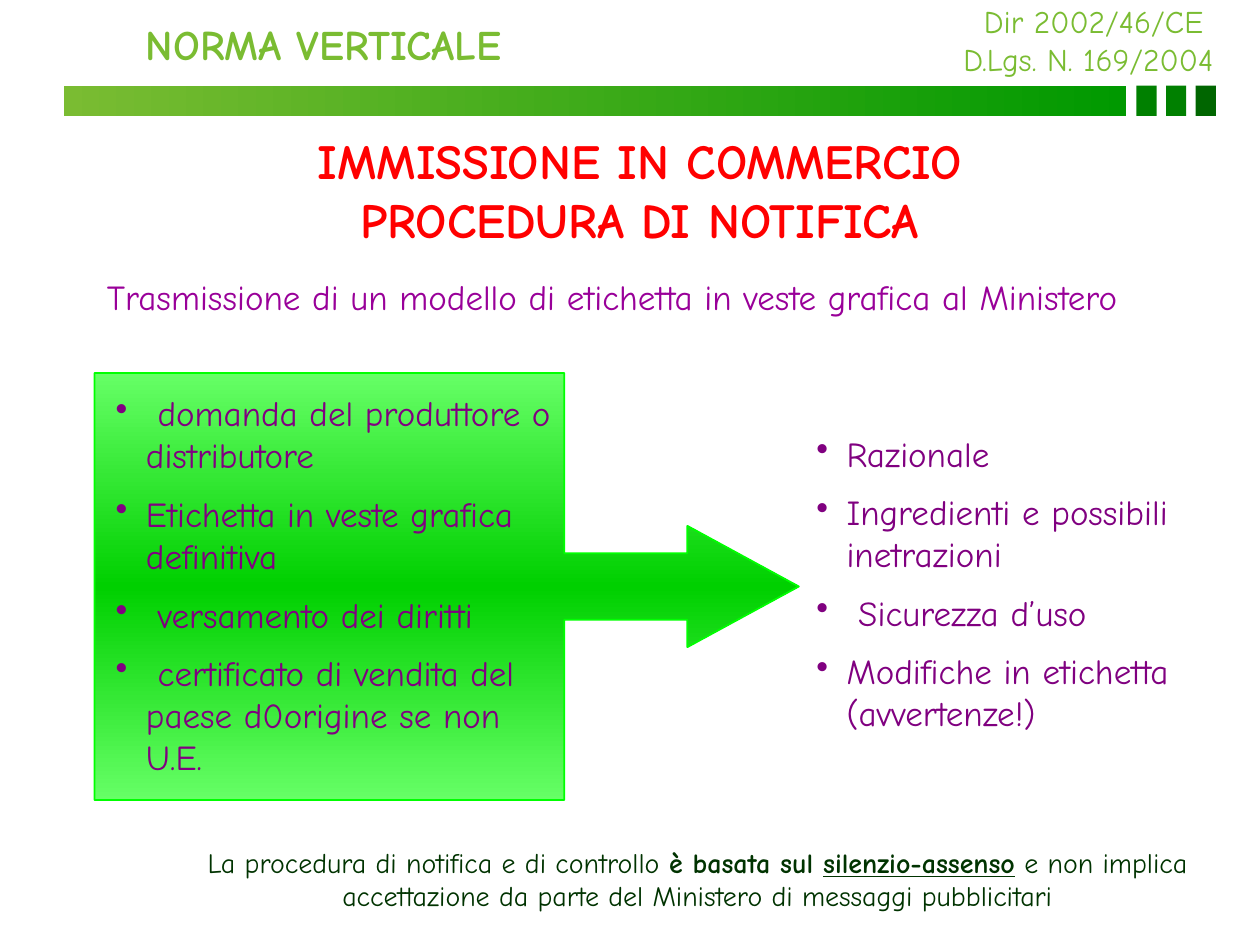
from lxml.etree import SubElement
from pptx import Presentation
from pptx.dml.color import RGBColor
from pptx.enum.shapes import MSO_SHAPE as SHAPE
from pptx.enum.text import PP_ALIGN as ALIGN
from pptx.oxml.ns import qn
from pptx.util import Inches, Pt

FONT = "Comic Neue"
LIME = RGBColor(0x7A, 0xBC, 0x32)
GREEN = RGBColor(0x00, 0x99, 0x00)
MID_GREEN = RGBColor(0x00, 0x80, 0x00)
DARK_GREEN = RGBColor(0x00, 0x66, 0x00)
NOTE_GREEN = RGBColor(0x00, 0x33, 0x00)
LIGHT_GREEN = RGBColor(0x66, 0xFF, 0x66)
DEEP_GREEN = RGBColor(0x00, 0xD0, 0x00)
EDGE_GREEN = RGBColor(0x00, 0xFF, 0x00)
RED = RGBColor(0xFF, 0x00, 0x00)
VIOLET = RGBColor(0x99, 0x00, 0x99)
PURPLE = RGBColor(0x80, 0x00, 0x80)


def add_bullet(p, indent=0.24):
    pPr = p._p.get_or_add_pPr()
    pPr.set("marL", str(Inches(indent)))
    pPr.set("indent", str(-Inches(indent)))
    SubElement(pPr, qn("a:buChar"), char="•")


def add_text(slide, box, paragraphs, size, color, bold=False, align=ALIGN.LEFT,
             bullets=False, gap=0):
    tf = slide.shapes.add_textbox(*map(Inches, box)).text_frame
    tf.word_wrap = True
    for i, runs in enumerate(paragraphs):
        p = tf.add_paragraph() if i else tf.paragraphs[0]
        p.alignment = align
        if i and gap:
            p.space_before = Pt(gap)
        if bullets:
            add_bullet(p)
        for text, style in [(runs, {})] if isinstance(runs, str) else runs:
            r = p.add_run()
            r.text = text
            r.font.name = FONT
            r.font.size = Pt(size)
            r.font.color.rgb = color
            r.font.bold = style.get("bold", bold)
            r.font.underline = style.get("underline", False)


def add_filled(slide, kind, box, colors, angle=0):
    sp = slide.shapes.add_shape(kind, *map(Inches, box))
    sp.shadow.inherit = False
    sp.line.fill.background()
    if len(colors) == 1:
        sp.fill.solid()
        sp.fill.fore_color.rgb = colors[0]
        return sp
    sp.fill.gradient()
    sp.fill.gradient_angle = angle
    stops = sp._element.spPr.find(".//" + qn("a:gsLst"))
    stops.clear()
    for i, color in enumerate(colors):
        pos = 100000 * i // (len(colors) - 1)
        gs = SubElement(stops, qn("a:gs"), pos=str(pos))
        SubElement(gs, qn("a:srgbClr"), val=str(color))
    return sp


def add_header(slide, left, top, width, height):
    add_text(slide, (left + 0.55, 0.1, 3.54, 0.5), ["NORMA VERTICALE"], 24, LIME, bold=True)
    add_text(slide, (left + 6.9, -0.03, 2.54, 0.7),
             ["Dir 2002/46/CE", "D.Lgs. N. 169/2004 "], 18, LIME, align=ALIGN.CENTER)
    block, pitch = 0.16, 0.235
    first = left + width - block - 2 * pitch
    add_filled(slide, SHAPE.RECTANGLE, (left, top, 8.43, height), [LIME, GREEN])
    for i, color in enumerate([MID_GREEN, MID_GREEN, DARK_GREEN]):
        add_filled(slide, SHAPE.RECTANGLE, (first + i * pitch, top, block, height), [color])


def add_procedure(slide, left, top, width, height):
    callout = add_filled(slide, SHAPE.RIGHT_ARROW_CALLOUT, (left, top, width, height),
                         [LIGHT_GREEN, DEEP_GREEN, LIGHT_GREEN], angle=270)
    callout.line.color.rgb = EDGE_GREEN
    callout.line.width = Pt(1)
    for i, value in enumerate([0.156, 0.142, 0.261, 0.667]):
        callout.adjustments[i] = value
    style = dict(size=20, color=PURPLE, bullets=True, gap=9.5)
    add_text(slide, (left + 0.07, top + 0.1, 3.7, 3.17), [
        " domanda del produttore o distributore",
        "Etichetta in veste grafica definitiva",
        " versamento dei diritti",
        " certificato di vendita del paese d0origine se non U.E.",
    ], **style)
    add_text(slide, (left + width + 0.04, top + 0.42, 3.58, 2.5), [
        "Razionale",
        "Ingredienti e possibili inetrazioni",
        " Sicurezza d’uso",
        "Modifiche in etichetta (avvertenze!)",
    ], **style)


def main():
    prs = Presentation()
    prs.slide_width, prs.slide_height = Inches(10), Inches(7.5)
    slide = prs.slides.add_slide(prs.slide_layouts[6])
    add_header(slide, 0.51, 0.68, 9.14, 0.24)
    add_text(slide, (1.93, 0.99, 6.29, 1.5),
             ["IMMISSIONE IN COMMERCIO", "PROCEDURA DI NOTIFICA"],
             28, RED, bold=True, align=ALIGN.CENTER)
    add_text(slide, (0.75, 2.14, 9.25, 0.43),
             ["Trasmissione di un modello di etichetta in veste grafica al Ministero"], 20, VIOLET)
    add_procedure(slide, 0.75, 2.96, 5.59, 3.39)
    add_text(slide, (1.46, 6.66, 8.15, 0.64), [[
        ("La procedura di notifica e di controllo ", {}),
        ("è basata sul ", {"bold": True}),
        ("silenzio-assenso", {"bold": True, "underline": True}),
        (" e non implica accettazione da parte del Ministero di messaggi pubblicitari", {}),
    ]], 16, NOTE_GREEN, align=ALIGN.CENTER)
    prs.save("out.pptx")


if __name__ == "__main__":
    main()
